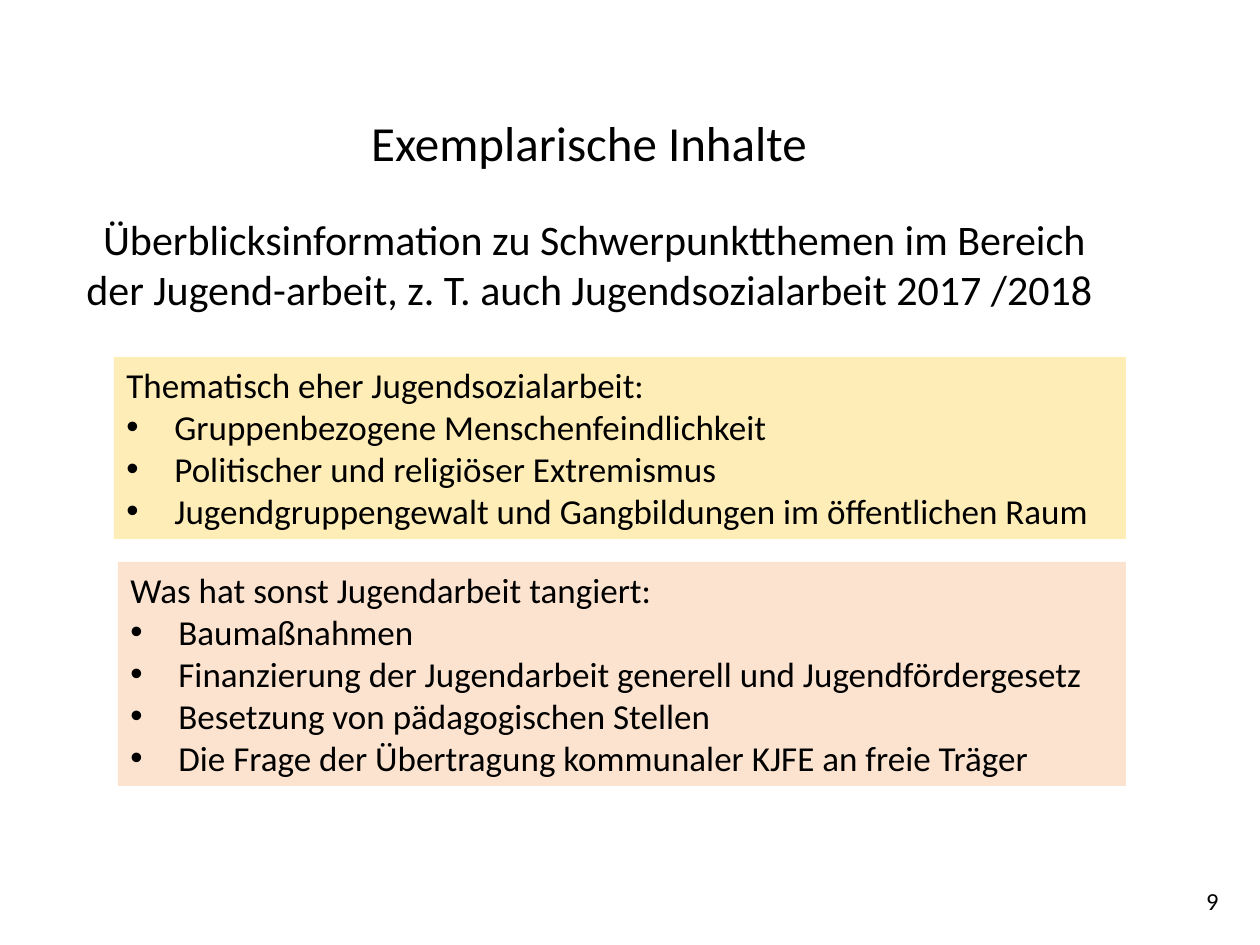
import pptx
import pptx.dml.color
import pptx.enum.shapes
import pptx.enum.text
import pptx.oxml.ns
import pptx.util
from lxml import etree

EMU_PER_PX = 914400 // 126
FONT = "Calibri"
BLACK = "000000"
ALIGN = pptx.enum.text.PP_ALIGN
INDENT = 48

THEMES = [
    "Gruppenbezogene Menschenfeindlichkeit",
    "Politischer und religiöser Extremismus",
    "Jugendgruppengewalt und Gangbildungen im öffentlichen Raum",
]
OTHER_TOPICS = [
    "Baumaßnahmen",
    "Finanzierung der Jugendarbeit generell und Jugendfördergesetz",
    "Besetzung von pädagogischen Stellen",
    "Die Frage der Übertragung kommunaler KJFE an freie Träger",
]


def px(length):
    return pptx.util.Emu(length * EMU_PER_PX)


def color(value):
    return pptx.dml.color.RGBColor.from_string(value)


def add_run(paragraph, text, size):
    run = paragraph.add_run()
    run.text = text
    run.font.name = FONT
    run.font.size = pptx.util.Pt(size)
    run.font.color.rgb = color(BLACK)


def add_bullet(paragraph):
    """Give the paragraph a round bullet with a hanging indent."""
    properties = paragraph._p.get_or_add_pPr()
    properties.set("marL", str(px(INDENT)))
    properties.set("indent", str(px(-INDENT)))
    font = etree.SubElement(properties, pptx.oxml.ns.qn("a:buFont"))
    font.set("typeface", "Arial")
    bullet = etree.SubElement(properties, pptx.oxml.ns.qn("a:buChar"))
    bullet.set("char", "•")


def set_frame(shape):
    frame = shape.text_frame
    frame.word_wrap = True
    frame.auto_size = pptx.enum.text.MSO_AUTO_SIZE.NONE
    frame.vertical_anchor = pptx.enum.text.MSO_ANCHOR.TOP
    return frame


def fill_title(slide):
    title = slide.shapes.title
    title.left, title.top, title.width, title.height = map(px, (64, 106, 1061, 238))
    frame = set_frame(title)
    heading = frame.paragraphs[0]
    heading.alignment = ALIGN.CENTER
    add_run(heading, "Exemplarische Inhalte ", 28)
    subtitle = frame.add_paragraph()
    subtitle.alignment = ALIGN.CENTER
    subtitle.space_before = pptx.util.Pt(24)
    add_run(subtitle, "Überblicksinformation zu Schwerpunktthemen im Bereich der "
            "Jugend-arbeit, z. T. auch Jugendsozialarbeit 2017 /2018 ", 24)


def add_topic_box(slide, left, top, width, height, fill, heading, topics):
    box = slide.shapes.add_shape(
        pptx.enum.shapes.MSO_SHAPE.RECTANGLE, *map(px, (left, top, width, height)))
    box.shadow.inherit = False
    box.fill.solid()
    box.fill.fore_color.rgb = color(fill)
    box.line.fill.background()
    frame = set_frame(box)
    paragraph = frame.paragraphs[0]
    paragraph.alignment = ALIGN.LEFT
    add_run(paragraph, heading, 20)
    for topic in topics:
        paragraph = frame.add_paragraph()
        paragraph.alignment = ALIGN.LEFT
        add_bullet(paragraph)
        add_run(paragraph, topic, 20)


def add_page_number(slide, number):
    box = slide.shapes.add_textbox(*map(px, (937, 880, 294, 65)))
    paragraph = set_frame(box).paragraphs[0]
    paragraph.alignment = ALIGN.RIGHT
    add_run(paragraph, number, 14)


def main():
    presentation = pptx.Presentation()
    presentation.slide_width = px(1260)
    presentation.slide_height = px(945)
    slide = presentation.slides.add_slide(presentation.slide_layouts[5])
    fill_title(slide)
    add_topic_box(slide, 114, 357, 1012, 182, "FFEDB7",
                  "Thematisch eher Jugendsozialarbeit:", THEMES)
    add_topic_box(slide, 118, 562, 1008, 224, "FCE3CF",
                  "Was hat sonst Jugendarbeit tangiert:", OTHER_TOPICS)
    add_page_number(slide, "9")
    presentation.save("out.pptx")


if __name__ == "__main__":
    main()
